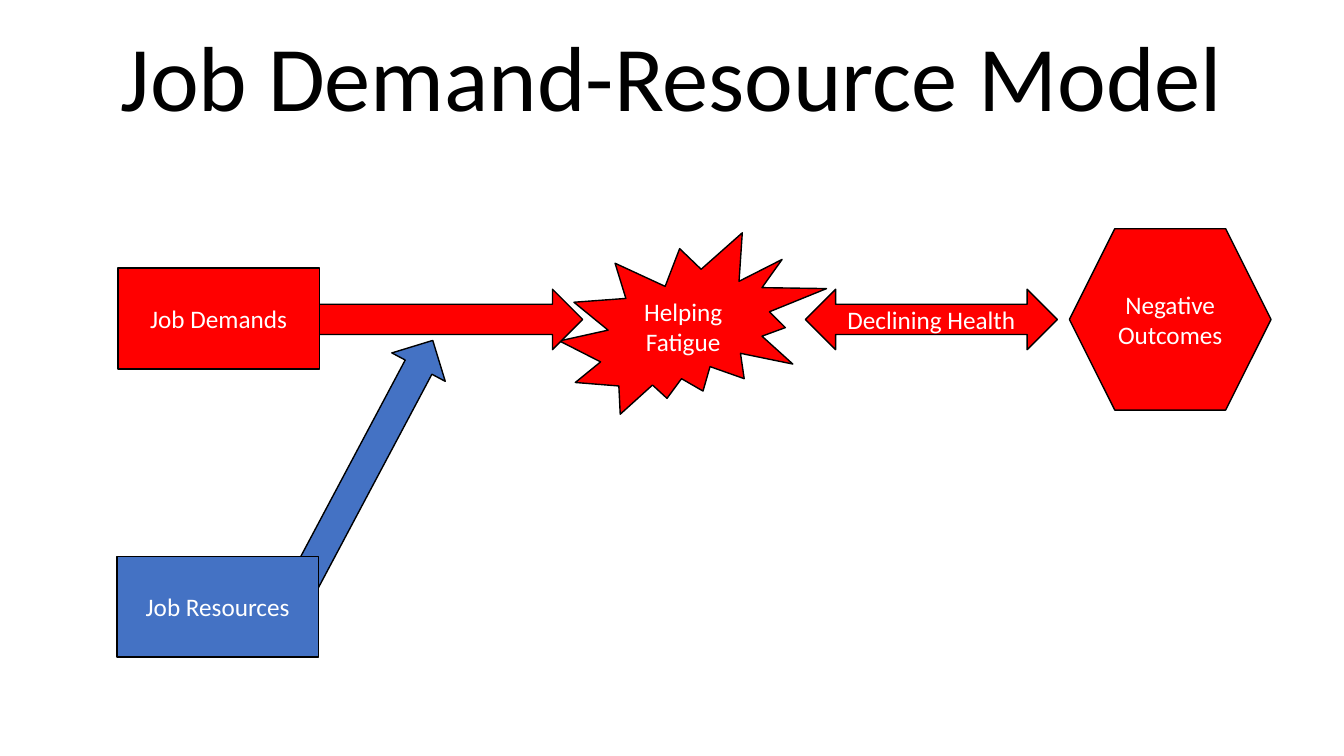
from dataclasses import dataclass

from pptx import Presentation
from pptx.dml.color import RGBColor
from pptx.enum.shapes import MSO_SHAPE
from pptx.enum.text import MSO_ANCHOR, PP_ALIGN
from pptx.util import Pt

RED = "FF0000"
BLUE = "4472C4"
BLACK = "000000"
WHITE = "FFFFFF"


@dataclass(frozen=True)
class Node:
    kind: MSO_SHAPE
    left: float
    top: float
    width: float
    height: float
    fill: str
    label: str = ""
    rotation: float = 0


NODES = [
    Node(MSO_SHAPE.EXPLOSION2, 399.6, 166.3, 190.8, 129.6, RED, "Helping Fatigue"),
    Node(MSO_SHAPE.HEXAGON, 763.9, 163.4, 144, 129.6, RED, "Negative Outcomes"),
    Node(MSO_SHAPE.LEFT_RIGHT_ARROW, 575.3, 206.6, 180, 43.2, RED, "Declining Health"),
    Node(MSO_SHAPE.RIGHT_ARROW, 225.4, 206.6, 190.8, 43.2, RED),
    Node(MSO_SHAPE.RIGHT_ARROW, 166.3, 307.4, 194.4, 43.2, BLUE, rotation=298),
    Node(MSO_SHAPE.RECTANGLE, 83.5, 397.4, 144, 72, BLUE, "Job Resources"),
    Node(MSO_SHAPE.RECTANGLE, 84.2, 191.5, 144, 72, RED, "Job Demands"),
]


def color(value: str) -> RGBColor:
    return RGBColor.from_string(value)


def write_text(box, text: str, *, size: float, fill: str,
               anchor=MSO_ANCHOR.MIDDLE, spacing: float = 1.0) -> None:
    frame = box.text_frame
    frame.word_wrap = True
    frame.vertical_anchor = anchor
    para = frame.paragraphs[0]
    para.alignment = PP_ALIGN.CENTER
    para.line_spacing = spacing
    span = para.add_run()
    span.text = text
    span.font.name = "Calibri"
    span.font.size = Pt(size)
    span.font.color.rgb = color(fill)


def draw_node(page, node: Node) -> None:
    shape = page.shapes.add_shape(
        node.kind, Pt(node.left), Pt(node.top), Pt(node.width), Pt(node.height))
    shape.shadow.inherit = False
    shape.rotation = node.rotation
    shape.fill.solid()
    shape.fill.fore_color.rgb = color(node.fill)
    shape.line.color.rgb = color(BLACK)
    shape.line.width = Pt(1)
    if node.label:
        write_text(shape, node.label, size=18, fill=WHITE)


def main() -> None:
    deck = Presentation()
    deck.slide_width = Pt(960)
    deck.slide_height = Pt(540)
    page = deck.slides.add_slide(deck.slide_layouts[6])
    for node in NODES:
        draw_node(page, node)
    title = page.shapes.add_textbox(Pt(62.6), Pt(5.8), Pt(834.5), Pt(91.4))
    write_text(title, "Job Demand-Resource Model", size=66, fill=BLACK,
               anchor=MSO_ANCHOR.BOTTOM, spacing=0.9)
    deck.save("out.pptx")


if __name__ == "__main__":
    main()
